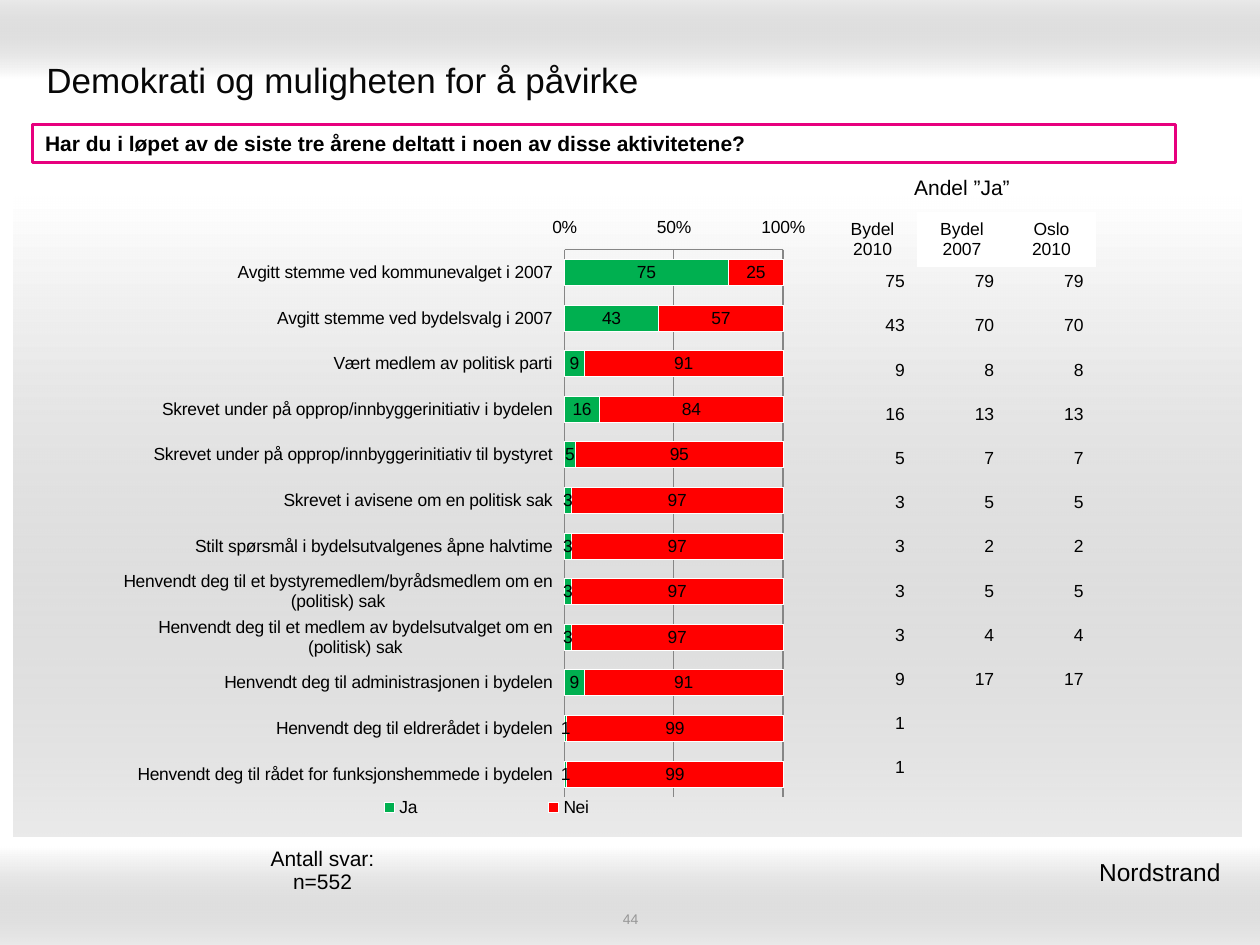
"""Build the slide on democracy and the chance to influence."""
import dataclasses
import typing

import pptx
import pptx.chart.data
import pptx.dml.color
import pptx.enum.chart
import pptx.enum.shapes
import pptx.enum.text
import pptx.oxml
import pptx.oxml.ns
import pptx.util

WIDTH, HEIGHT = pptx.util.Inches(10), pptx.util.Inches(7.5)
FONT = "Arial"
BLACK, WHITE, GREY = "000000", "FFFFFF", "868686"
PLAIN_TABLE = "{2D5ABB26-0587-4C30-8999-92F81FD0307C}"
ALIGN = pptx.enum.text.PP_ALIGN
ANCHOR = pptx.enum.text.MSO_ANCHOR
CHART = pptx.enum.chart


@dataclasses.dataclass(frozen=True)
class Area:
    """A rectangle in percent of the slide's size."""
    left: float
    top: float
    width: float
    height: float

    def lengths(self) -> tuple[int, int, int, int]:
        """Return the rectangle as slide lengths."""
        return (round(WIDTH * self.left / 100), round(HEIGHT * self.top / 100),
                round(WIDTH * self.width / 100), round(HEIGHT * self.height / 100))


@dataclasses.dataclass(frozen=True)
class Style:
    """The look of a piece of text."""
    size: float
    color: str = BLACK
    bold: bool = False
    align: ALIGN = ALIGN.LEFT
    anchor: ANCHOR = ANCHOR.MIDDLE


@dataclasses.dataclass(frozen=True)
class Band:
    """A grey gradient behind the content."""
    area: Area
    angle: int


@dataclasses.dataclass(frozen=True)
class Label:
    """A text box."""
    area: Area
    text: str
    style: Style


@dataclasses.dataclass(frozen=True)
class Activity:
    """An activity with its shares of yes and no, and the earlier and city shares."""
    name: str
    yes: int
    no: int
    earlier: str = ""
    city: str = ""


BANDS = [
    Band(Area(0, 0, 100, 8.27), 270),
    Band(Area(0, 89.6, 100, 10.4), 90),
    Band(Area(1.1, 20.8, 97.4, 67.73), 90),
]
LABELS = [
    Label(Area(2.7, 4.8, 94.5, 7.33), "Demokrati og muligheten for å påvirke", Style(20, "080808")),
    Label(Area(34.2, 96.27, 31.7, 1.87), "44", Style(8, "969696", align=ALIGN.CENTER)),
    Label(Area(61, 90, 37.4, 4.53), "Nordstrand ", Style(14, align=ALIGN.RIGHT)),
]
QUESTION = Label(Area(2.6, 13.2, 90.7, 4),
                 "Har du i løpet av de siste tre årene deltatt i noen av disse aktivitetene?",
                 Style(12, bold=True))
ACTIVITIES = [
    Activity("Avgitt stemme ved kommunevalget i 2007", 75, 25, "79", "79"),
    Activity("Avgitt stemme ved bydelsvalg i 2007", 43, 57, "70", "70"),
    Activity("Vært medlem av politisk parti", 9, 91, "8", "8"),
    Activity("Skrevet under på opprop/innbyggerinitiativ i bydelen", 16, 84, "13", "13"),
    Activity("Skrevet under på opprop/innbyggerinitiativ til bystyret", 5, 95, "7", "7"),
    Activity("Skrevet i avisene om en politisk sak", 3, 97, "5", "5"),
    Activity("Stilt spørsmål i bydelsutvalgenes åpne halvtime", 3, 97, "2", "2"),
    Activity("Henvendt deg til et bystyremedlem/byrådsmedlem om en (politisk) sak", 3, 97, "5", "5"),
    Activity("Henvendt deg til et medlem av bydelsutvalget om en (politisk) sak", 3, 97, "4", "4"),
    Activity("Henvendt deg til administrasjonen i bydelen", 9, 91, "17", "17"),
    Activity("Henvendt deg til eldrerådet i bydelen", 1, 99),
    Activity("Henvendt deg til rådet for funksjonshemmede i bydelen", 1, 99),
]


def rgb(color: str) -> pptx.dml.color.RGBColor:
    """Turn a hex string into a colour."""
    return pptx.dml.color.RGBColor.from_string(color)


def write(frame: typing.Any, text: str, style: Style) -> None:
    """Write each line of the text as a paragraph."""
    frame.word_wrap = True
    frame.vertical_anchor = style.anchor
    for index, line in enumerate(text.split("\n")):
        paragraph = frame.add_paragraph() if index else frame.paragraphs[0]
        paragraph.alignment = style.align
        if line:
            run = paragraph.add_run()
            run.text = line
            run.font.name, run.font.size = FONT, pptx.util.Pt(style.size)
            run.font.bold, run.font.color.rgb = style.bold, rgb(style.color)


def add_rectangle(slide: typing.Any, area: Area) -> typing.Any:
    """Add a rectangle without shadow."""
    shape = slide.shapes.add_shape(pptx.enum.shapes.MSO_SHAPE.RECTANGLE, *area.lengths())
    shape.shadow.inherit = False
    return shape


def add_band(slide: typing.Any, band: Band) -> None:
    """Add a gradient from white to transparent grey."""
    shape = add_rectangle(slide, band.area)
    shape.line.fill.background()
    gradient = pptx.oxml.parse_xml(
        f'<a:gradFill {pptx.oxml.ns.nsdecls("a")} rotWithShape="1"><a:gsLst>'
        f'<a:gs pos="0"><a:srgbClr val="{WHITE}"/></a:gs>'
        '<a:gs pos="100000"><a:srgbClr val="999999"><a:alpha val="20000"/></a:srgbClr></a:gs>'
        f'</a:gsLst><a:lin ang="{band.angle * 60000}" scaled="0"/></a:gradFill>')
    shape._element.spPr.find(pptx.oxml.ns.qn("a:prstGeom")).addnext(gradient)


def add_label(slide: typing.Any, label: Label) -> None:
    """Add a text box."""
    write(slide.shapes.add_textbox(*label.area.lengths()).text_frame, label.text, label.style)


def add_question(slide: typing.Any, label: Label) -> None:
    """Add the framed question."""
    shape = add_rectangle(slide, label.area)
    shape.fill.solid()
    shape.fill.fore_color.rgb = rgb(WHITE)
    shape.line.color.rgb, shape.line.width = rgb("E7007E"), pptx.util.Pt(2)
    write(shape.text_frame, label.text, label.style)


def add_table(slide: typing.Any, area: Area, rows: list[list[str]], styles: list[Style],
              shares: list[float], white: frozenset = frozenset()) -> typing.Any:
    """Add a plain table with a style and a share of the height for each row."""
    frame = slide.shapes.add_table(len(rows), len(rows[0]), *area.lengths())
    for identifier in frame._element.iter(pptx.oxml.ns.qn("a:tableStyleId")):
        identifier.text = PLAIN_TABLE
    table = frame.table
    table.first_row = table.horz_banding = False
    for row, (texts, style, share) in enumerate(zip(rows, styles, shares)):
        table.rows[row].height = round(area.lengths()[3] * share / sum(shares))
        for column, text in enumerate(texts):
            cell = table.cell(row, column)
            cell.margin_top = cell.margin_bottom = pptx.util.Inches(0.02)
            cell.vertical_anchor = style.anchor
            if (row, column) in white:
                cell.fill.solid()
                cell.fill.fore_color.rgb = rgb(WHITE)
            else:
                cell.fill.background()
            write(cell.text_frame, text, style)
    return table


def place(part: typing.Any, share: Area, inner: bool = False) -> None:
    """Fix the place of a chart part in percent of the chart."""
    for layout in part.findall(pptx.oxml.ns.qn("c:layout")):
        part.remove(layout)
    target = '<c:layoutTarget val="inner"/>' if inner else ""
    sizes = zip("xywh", dataclasses.astuple(share))
    layout = pptx.oxml.parse_xml(
        f'<c:layout {pptx.oxml.ns.nsdecls("c")}><c:manualLayout>{target}'
        '<c:xMode val="edge"/><c:yMode val="edge"/>'
        + "".join(f'<c:{name} val="{size / 100}"/>' for name, size in sizes)
        + "</c:manualLayout></c:layout>")
    position = part.find(pptx.oxml.ns.qn("c:legendPos"))
    if position is None:
        part.insert(0, layout)
    else:
        position.addnext(layout)


def add_chart(slide: typing.Any, area: Area, activities: list[Activity]) -> None:
    """Add the stacked bars of yes and no."""
    data = pptx.chart.data.CategoryChartData()
    data.categories = [activity.name for activity in activities]
    data.add_series("Ja", [activity.yes for activity in activities])
    data.add_series("Nei", [activity.no for activity in activities])
    chart = slide.shapes.add_chart(CHART.XL_CHART_TYPE.BAR_STACKED, *area.lengths(), data).chart
    chart.has_title = False
    chart.font.name, chart.font.size = FONT, pptx.util.Pt(10)
    chart.font.color.rgb = rgb(BLACK)
    plot = chart.plots[0]
    plot.gap_width, plot.overlap, plot.vary_by_categories = 75, 100, False
    for series, color in zip(plot.series, ("00B050", "FF0000")):
        series.format.fill.solid()
        series.format.fill.fore_color.rgb = rgb(color)
        series.format.line.color.rgb = rgb(WHITE)
        labels = series.data_labels
        labels.show_value, labels.number_format = True, "0"
        labels.number_format_is_linked = False
    names, values = chart.category_axis, chart.value_axis
    names.reverse_order = True
    names.major_tick_mark = CHART.XL_TICK_MARK.NONE
    values.major_tick_mark = CHART.XL_TICK_MARK.INSIDE
    values.minimum_scale, values.maximum_scale, values.major_unit = 0, 100, 50
    values.has_major_gridlines = True
    values.tick_labels.number_format = "General\\%"
    values.tick_labels.number_format_is_linked = False
    for axis in (names, values):
        axis.tick_label_position = CHART.XL_TICK_LABEL_POSITION.LOW
    for part in (names, values, values.major_gridlines):
        part.format.line.color.rgb = rgb(GREY)
    chart.has_legend = True
    chart.legend.position = CHART.XL_LEGEND_POSITION.BOTTOM
    chart.legend.include_in_layout = False
    place(chart._chartSpace.chart.plotArea, Area(63.3, 6.9, 31.7, 85), inner=True)
    place(chart.legend._element, Area(19, 91.5, 66, 4))


def main() -> None:
    """Build and save the presentation."""
    presentation = pptx.Presentation()
    presentation.slide_width, presentation.slide_height = WIDTH, HEIGHT
    slide = presentation.slides.add_slide(presentation.slide_layouts[6])
    for band in BANDS:
        add_band(slide, band)
    add_question(slide, QUESTION)
    add_chart(slide, Area(9.8, 21.73, 55.1, 68.13), ACTIVITIES)
    count = len(ACTIVITIES)
    add_table(slide, Area(65.7, 27.47, 21.3, 56.13),
              [[str(activity.yes), activity.earlier, activity.city] for activity in ACTIVITIES],
              [Style(10, align=ALIGN.RIGHT)] * count, [1] * count)
    large, small = (Style(size, align=ALIGN.CENTER) for size in (12, 10))
    header = add_table(slide, Area(65.7, 17.47, 21.3, 10.8),
                       [["Andel ”Ja”", "", ""], ["Bydel\n2010", "Bydel\n2007", "Oslo\n2010"]],
                       [large, small], [37, 44], frozenset({(1, 1), (1, 2)}))
    header.cell(0, 0).merge(header.cell(0, 2))
    add_table(slide, Area(18.5, 88.8, 14.2, 6.67), [["Antall svar:\nn=552"]], [large], [1])
    for label in LABELS:
        add_label(slide, label)
    presentation.save("out.pptx")


if __name__ == "__main__":
    main()
